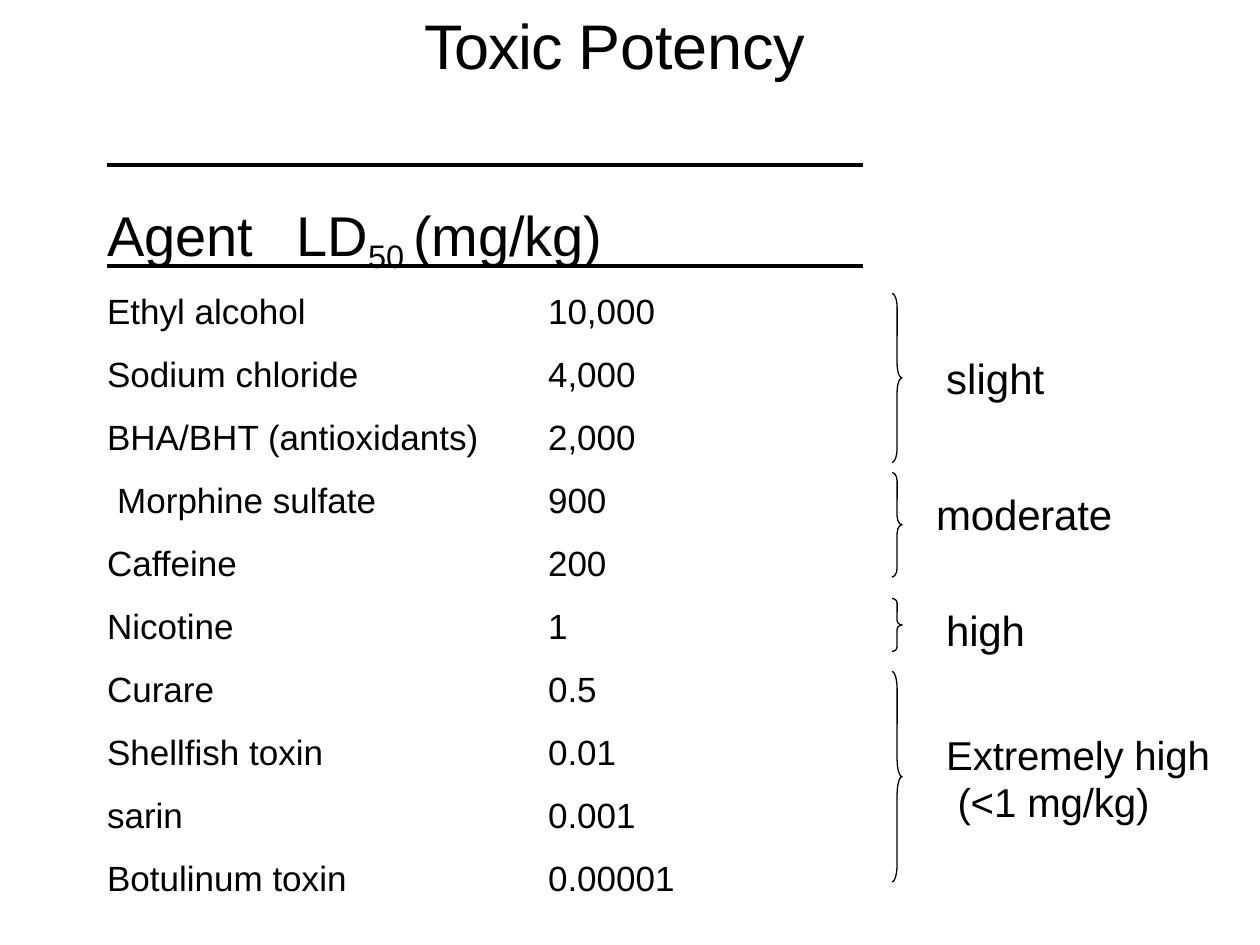
from dataclasses import dataclass

from lxml import etree
from pptx import Presentation
from pptx.dml.color import RGBColor
from pptx.enum import shapes, text
from pptx.oxml import ns
from pptx.util import Inches, Pt

BLACK = RGBColor(0, 0, 0)
WHITE = RGBColor(255, 255, 255)
FONT = "Arial"


@dataclass
class Run:
    text: str
    spacing: float = 0
    baseline: int = 0


@dataclass
class Line:
    """One paragraph, with its left indent in inches."""
    runs: list[Run]
    indent: float = 0.01


@dataclass
class Agent:
    name: str
    dose: str
    indent: float = 0.01


@dataclass
class Potency:
    """A brace over some rows and the label beside it."""
    top: float
    height: float
    label_box: tuple[float, float, float, float]
    lines: list[Line]
    size: float = 24
    line_height: float | None = None


AGENTS = [
    Agent("Ethyl alcohol", "10,000"),
    Agent("Sodium chloride", "4,000"),
    Agent("BHA/BHT (antioxidants)", "2,000"),
    Agent("Morphine sulfate", "900", indent=0.09),
    Agent("Caffeine", "200"),
    Agent("Nicotine", "1"),
    Agent("Curare", "0.5"),
    Agent("Shellfish toxin", "0.01"),
    Agent("sarin", "0.001"),
    Agent("Botulinum toxin", "0.00001"),
]

POTENCIES = [
    Potency(2.33, 1.34, (7.5, 2.79, 0.81, 0.43), [Line([Run("slight")])]),
    Potency(3.75, 0.83, (7.42, 3.87, 1.44, 0.43), [Line([Run("moderate", -0.1)])]),
    Potency(4.75, 0.42, (7.5, 4.79, 0.66, 0.43), [Line([Run("high", -0.1)])]),
    Potency(5.33, 1.67, (7.5, 5.79, 2.14, 0.79),
            [Line([Run("Extremely high", -0.1)]),
             Line([Run("(<1 mg/kg)", -0.1)], indent=0.1)],
            size=23, line_height=27),
]


def add_text(slide, box: tuple[float, float, float, float], lines: list[Line], *,
             size: float, space_before: float = 0, line_height: float | None = None,
             tab: float | None = None) -> None:
    """Add a text box; box is in inches, the other measures in points, tab in inches."""
    frame = slide.shapes.add_textbox(*map(Inches, box)).text_frame
    frame.word_wrap = True
    frame.margin_left = frame.margin_right = frame.margin_bottom = 0
    frame.margin_top = Inches(0.01)
    frame.vertical_anchor = text.MSO_ANCHOR.TOP
    for index, line in enumerate(lines):
        paragraph = frame.add_paragraph() if index else frame.paragraphs[0]
        paragraph.space_before = Pt(space_before)
        if line_height:
            paragraph.line_spacing = Pt(line_height)
        properties = paragraph._p.get_or_add_pPr()
        properties.set("marL", str(Inches(line.indent)))
        properties.set("indent", "0")
        if tab:
            tabs = etree.SubElement(properties, ns.qn("a:tabLst"))
            etree.SubElement(tabs, ns.qn("a:tab"), pos=str(Inches(tab)), algn="l")
        for part in line.runs:
            run = paragraph.add_run()
            run.text = part.text
            run.font.name = FONT
            run.font.size = Pt(size)
            run.font.color.rgb = BLACK
            if part.spacing:
                run._r.get_or_add_rPr().set("spc", str(round(part.spacing * 100)))
            if part.baseline:
                run._r.get_or_add_rPr().set("baseline", str(part.baseline * 1000))


def add_rule(slide, left: float, y: float, width: float) -> None:
    rule = slide.shapes.add_connector(shapes.MSO_CONNECTOR.STRAIGHT, Inches(left),
                                      Inches(y), Inches(left + width), Inches(y))
    rule.line.color.rgb = BLACK
    rule.line.width = Pt(2.25)
    etree.SubElement(rule._element.spPr, ns.qn("a:effectLst"))


def add_brace(slide, top: float, height: float, left: float = 7.08,
              width: float = 0.08) -> None:
    brace = slide.shapes.add_shape(shapes.MSO_SHAPE.RIGHT_BRACE, Inches(left),
                                   Inches(top), Inches(width), Inches(height))
    brace.shadow.inherit = False
    brace.fill.background()
    brace.line.color.rgb = BLACK
    brace.line.width = Pt(0.75)
    brace.adjustments[0] = height / 12 / width  # curl is a twelfth of the height


def main() -> None:
    presentation = Presentation()
    presentation.slide_width, presentation.slide_height = Inches(10), Inches(7.5)
    slide = presentation.slides.add_slide(presentation.slide_layouts[6])
    slide.background.fill.solid()
    slide.background.fill.fore_color.rgb = WHITE

    add_text(slide, (3.36, 0.04, 3.11, 0.63),
             [Line([Run("Toxic ", -0.8), Run("Potency", -0.1)])],
             size=36, space_before=1)

    for y in (1.31, 2.11):
        add_rule(slide, 0.85, y, 6)
    header = [Run("Agent\t"), Run("LD", 0.1), Run("50 ", baseline=-21),
              Run("(mg/kg)", -0.1)]
    add_text(slide, (0.85, 1.58, 5.08, 0.56), [Line(header, indent=0)],
             size=32, space_before=1, tab=2.51)

    names = [Line([Run(agent.name)], agent.indent) for agent in AGENTS]
    doses = [Line([Run(agent.dose)]) for agent in AGENTS]
    for left, width, column in ((0.84, 3.2, names), (4.34, 1.2, doses)):
        add_text(slide, (left, 2.12, width, 5.03), column, size=20, line_height=36)

    for potency in POTENCIES:
        add_brace(slide, potency.top, potency.height)
        add_text(slide, potency.label_box, potency.lines, size=potency.size,
                 space_before=0 if potency.line_height else 1,
                 line_height=potency.line_height)

    presentation.save("out.pptx")


if __name__ == "__main__":
    main()
